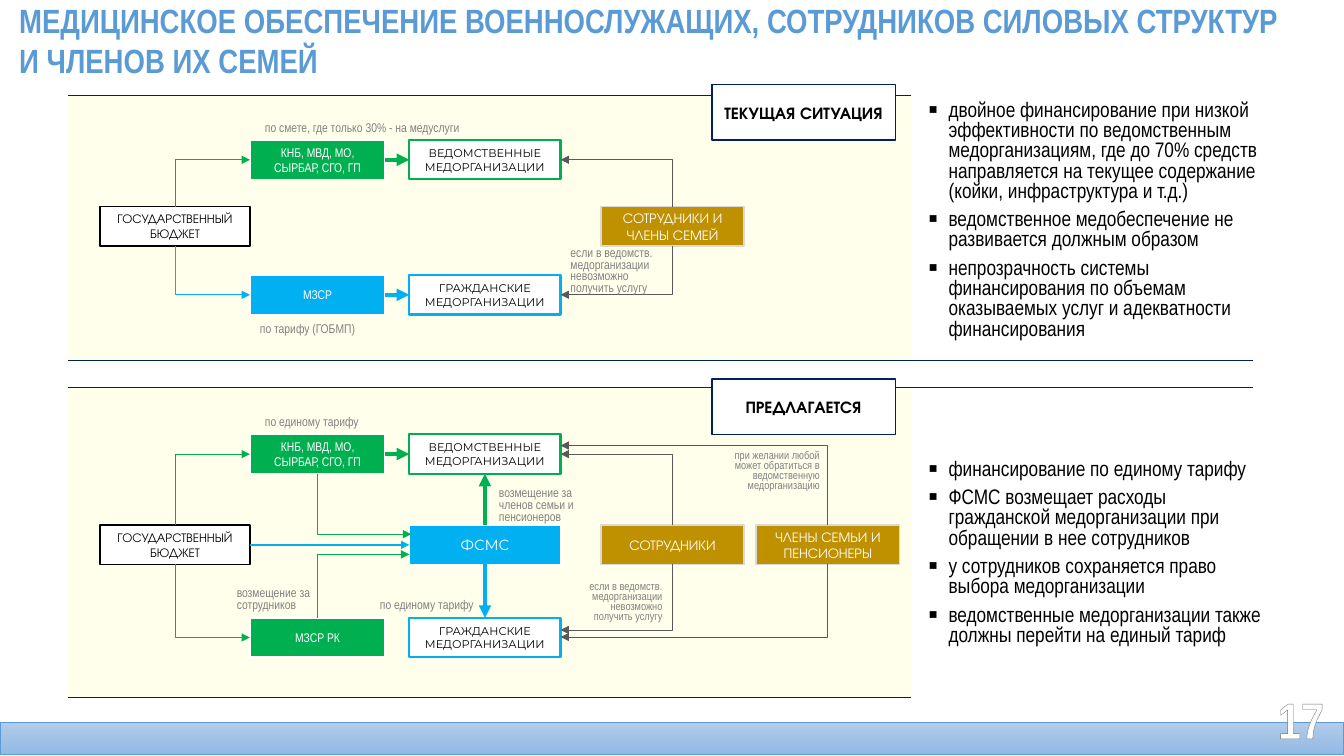
import pptx
import pptx.dml.color
import pptx.enum.shapes
import pptx.enum.text
import pptx.oxml.ns
import pptx.util
from lxml import etree

Inches = pptx.util.Inches
Anchor = pptx.enum.text.MSO_ANCHOR
Align = pptx.enum.text.PP_ALIGN
Kind = pptx.enum.shapes.MSO_CONNECTOR
qn = pptx.oxml.ns.qn
TOP, LEFT, BOTTOM, RIGHT = range(4)


class Theme:
    """Colours, fonts and type sizes of the slide."""
    white, black, cream, pale = "FFFFFF", "000000", "FFFFEB", "D9D9D9"
    green, blue, gold, navy = "00B050", "00B0F0", "BF9000", "002060"
    note, dark, edge = "808080", "595959", "767171"
    sky, light, deep = "5B9BD5", "B1CBE9", "93B9E4"
    narrow, round, wide = "Arial Narrow", "Montserrat", "TeX Gyre Adventor"
    tiny, small, mid, core, tag, body, head, page = 8, 9, 10, 10.5, 12, 15, 24, 36


T = Theme()


def tint(code):
    """Turn a hex code into a colour."""
    return pptx.dml.color.RGBColor.from_string(code)


def write(frame, text, size=T.small, font=T.narrow, color=T.note, bold=False,
          align=Align.LEFT, anchor=Anchor.TOP, pad=(0.1, 0.05), space=1.0, after=0):
    """Fill a text frame, one paragraph a line, and return its paragraphs."""
    frame.word_wrap = True
    frame.auto_size = pptx.enum.text.MSO_AUTO_SIZE.NONE
    frame.vertical_anchor = anchor
    frame.margin_left = frame.margin_right = Inches(pad[0])
    frame.margin_top = frame.margin_bottom = Inches(pad[1])
    frame.text = text
    for para in frame.paragraphs:
        para.alignment, para.line_spacing = align, space
        para.space_before, para.space_after = pptx.util.Pt(0), pptx.util.Pt(after)
        face = para.runs[0].font
        face.size, face.name, face.bold = pptx.util.Pt(size), font, bold
        face.color.rgb = tint(color)
    return frame.paragraphs


def label(slide, area, text, **form):
    """Add a text box and return its paragraphs."""
    return write(slide.shapes.add_textbox(*map(Inches, area)).text_frame, text, **form)


def block(slide, area, fill, line=None, width=1, text=None, **form):
    """Add a rectangle, with centred text if there is any."""
    box = slide.shapes.add_shape(pptx.enum.shapes.MSO_SHAPE.RECTANGLE, *map(Inches, area))
    box.shadow.inherit = False
    box.fill.solid()
    box.fill.fore_color.rgb = tint(fill)
    if line:
        box.line.color.rgb = tint(line)
        box.line.width = pptx.util.Pt(width)
    else:
        box.line.fill.background()
    if text:
        write(box.text_frame, text, align=Align.CENTER, anchor=Anchor.MIDDLE,
              pad=(0.08, 0.04), **form)
    return box


def people(slide, left, top, text):
    """Add a box for a group of patients."""
    return block(slide, (left, top, 1.42, 0.39), T.gold, T.pale, text=text,
                 size=T.mid, font=T.wide, color=T.white)


def spot(end):
    """Give the point of an end: a point, or a box and its side."""
    if isinstance(end[0], (int, float)):
        return Inches(end[0]), Inches(end[1])
    box, side = end
    right, down = ((1, 0), (0, 1), (1, 2), (2, 1))[side]
    return box.left + box.width * right // 2, box.top + box.height * down // 2


def link(slide, tip, root, color, width=0.5, bent=False, arrow=True):
    """Join two ends with a line whose arrowhead is at the tip."""
    kind = Kind.ELBOW if bent else Kind.STRAIGHT
    line = slide.shapes.add_connector(kind, *spot(tip), *spot(root))
    for end, join in ((tip, line.begin_connect), (root, line.end_connect)):
        if not isinstance(end[0], (int, float)):
            join(*end)
    line.line.color.rgb = tint(color)
    line.line.width = pptx.util.Pt(width)
    props = line._element.spPr
    if bent:
        props.find(qn("a:prstGeom")).set("prst", "bentConnector2")
    if arrow:
        etree.SubElement(props.find(qn("a:ln")), qn("a:headEnd"), type="triangle")
    etree.SubElement(props, qn("a:effectLst"))


def points(slide, top, *items):
    """Add a list with square bullets."""
    for para in label(slide, (9.11, top, 3.55, 2.38), "\n".join(items), size=T.body,
                      color=T.black, anchor=Anchor.MIDDLE, space=0.8, after=6):
        props = para._p.get_or_add_pPr()
        props.set("marL", str(Inches(0.2)))
        props.set("indent", str(-Inches(0.2)))
        etree.SubElement(props, qn("a:buSzPct"), val="130000")
        etree.SubElement(props, qn("a:buFont"), typeface="Arial")
        etree.SubElement(props, qn("a:buChar"), char="▪")


def scheme(slide, high, mid, low, health, color, staff):
    """Draw what both schemes share and return the boxes."""
    state = block(slide, (0.99, mid, 1.49, 0.39), T.white, T.black,
                  text="ГОСУДАРСТВЕННЫЙ БЮДЖЕТ", font=T.wide, color=T.black)
    pays = [block(slide, (2.48, top, 1.34, 0.39), fill, T.white, text=text, color=T.white)
            for top, fill, text in ((high, T.green, "КНБ, МВД, МО, СЫРБАР, СГО, ГП"),
                                    (low, color, health))]
    cares = [block(slide, (4.06, top, 1.5, 0.39), T.white, line, 1.5, text,
                   size=T.tiny, font=T.round, color=T.black)
             for top, line, text in ((high, T.green, "ВЕДОМСТВЕННЫЕ МЕДОРГАНИЗАЦИИ"),
                                     (low, T.blue, "ГРАЖДАНСКИЕ МЕДОРГАНИЗАЦИИ"))]
    staff = people(slide, 5.96, mid, staff)
    link(slide, (pays[0], LEFT), (state, TOP), T.green, bent=True)
    link(slide, (pays[1], LEFT), (state, BOTTOM), color, bent=True)
    link(slide, (cares[0], LEFT), (pays[0], RIGHT), T.green, 3)
    link(slide, (cares[0], RIGHT), (staff, TOP), T.dark, bent=True)
    return state, *pays, *cares, staff


def current(slide):
    """Draw the scheme as it is now."""
    block(slide, (0.67, 0.95, 8.37, 2.66), T.cream)
    _, _, health, _, civil, staff = scheme(
        slide, 1.39, 2.05, 2.73, "МЗСР", T.blue, "СОТРУДНИКИ И ЧЛЕНЫ СЕМЕЙ")
    link(slide, (civil, LEFT), (health, RIGHT), T.blue, 3)
    link(slide, (civil, RIGHT), (staff, BOTTOM), T.dark, bent=True)
    label(slide, (2.53, 1.14, 2.56, 0.25), "по смете, где только 30% - на медуслуги")
    label(slide, (2.48, 3.13, 2.56, 0.25), "по тарифу (ГОБМП)")
    label(slide, (5.56, 2.42, 1.11, 0.56),
          "если в ведомств. медорганизации невозможно получить услугу", space=0.75)


def planned(slide):
    """Draw the scheme that is proposed."""
    block(slide, (0.67, 3.84, 8.37, 3.08), T.cream)
    state, force, health, own, civil, staff = scheme(
        slide, 4.31, 5.21, 6.13, "МЗСР РК", T.green, "СОТРУДНИКИ")
    kin = people(slide, 7.5, 5.21, "ЧЛЕНЫ СЕМЬИ И ПЕНСИОНЕРЫ")
    fund = block(slide, (4.06, 5.21, 1.5, 0.39), T.blue, T.white, text="ФСМС",
                 size=T.core, font=T.round, color=T.white)
    for tip, root, color in (
            ((4.08, 5.3), (force, BOTTOM), T.green), ((4.06, 5.5), (health, TOP), T.green),
            ((5.56, 6.25), (staff, BOTTOM), T.dark), ((5.56, 4.42), (kin, TOP), T.dark),
            ((5.56, 6.32), (kin, BOTTOM), T.dark)):
        link(slide, tip, root, color, bent=True)
    link(slide, (own, BOTTOM), (fund, TOP), T.green, 3)
    link(slide, (civil, TOP), (fund, BOTTOM), T.blue, 3)
    link(slide, (fund, LEFT), (state, RIGHT), T.blue, 1.5)
    for left, top in ((2.53, 4.06), (3.67, 5.87)):
        label(slide, (left, top, 2.56, 0.25), "по единому тарифу")
    label(slide, (2.25, 5.78, 1.18, 0.34), "возмещение за сотрудников", space=0.8)
    label(slide, (4.85, 4.79, 1.18, 0.47), "возмещение за членов семьи и пенсионеров", space=0.8)
    for left, top, text in (
            (5.56, 5.73, "если в ведомств. медорганизации невозможно получить услугу"),
            (7.12, 4.43, "при желании любой может обратиться в ведомственную медорганизацию")):
        label(slide, (left, top, 1.11, 0.51), text, size=T.tiny, align=Align.RIGHT, space=0.75)


def footer(slide):
    """Draw the bottom bar and the page number."""
    bar = block(slide, (0, 7.17, 13.32, 0.31), T.light, T.sky, 0.5)
    bar.fill.gradient()
    bar.fill.gradient_angle = 270
    for stop, color in zip(bar.fill.gradient_stops, (T.light, T.deep)):
        stop.color.rgb = tint(color)
    para = label(slide, (12.33, 6.93, 0.9, 0.4), "17", size=T.page, color=T.white,
                 bold=True, align=Align.RIGHT, anchor=Anchor.MIDDLE)[0]
    line = etree.Element(qn("a:ln"), w=str(pptx.util.Pt(0.8)))
    etree.SubElement(etree.SubElement(line, qn("a:solidFill")), qn("a:srgbClr"), val=T.edge)
    para.runs[0].font._element.insert(0, line)


def main():
    """Build the slide and save it."""
    deck = pptx.Presentation()
    deck.slide_width, deck.slide_height = Inches(13.33), Inches(7.5)
    slide = deck.slides.add_slide(deck.slide_layouts[5])
    title = slide.shapes.title
    title.left, title.top, title.width, title.height = map(Inches, (0.09, -0.05, 12.95, 0.91))
    write(title.text_frame, "МЕДИЦИНСКОЕ ОБЕСПЕЧЕНИЕ ВОЕННОСЛУЖАЩИХ, СОТРУДНИКОВ "
          "СИЛОВЫХ СТРУКТУР И ЧЛЕНОВ ИХ СЕМЕЙ", size=T.head, color=T.sky, bold=True)
    current(slide)
    planned(slide)
    for top, right in ((0.95, 9.04), (3.58, 12.43), (3.84, 12.43), (6.92, 9.04)):
        link(slide, (right, top), (0.67, top), T.navy, arrow=False)
    for top, text in ((0.84, "ТЕКУЩАЯ СИТУАЦИЯ"), (3.76, "ПРЕДЛАГАЕТСЯ")):
        block(slide, (7.06, top, 1.82, 0.55), T.white, T.navy, text=text,
              size=T.tag, font=T.wide, color=T.black, bold=True)
    points(slide, 1, "двойное финансирование при низкой эффективности по ведомственным "
           "медорганизациям, где до 70% средств направляется на текущее содержание "
           "(койки, инфраструктура и т.д.)",
           "ведомственное медобеспечение не развивается должным образом",
           "непрозрачность системы финансирования по объемам оказываемых услуг "
           "и адекватности финансирования")
    points(slide, 4.3, "финансирование по единому тарифу",
           "ФСМС возмещает расходы гражданской медорганизации при обращении в нее сотрудников",
           "у сотрудников сохраняется право выбора медорганизации",
           "ведомственные медорганизации также должны перейти на единый тариф")
    footer(slide)
    deck.save("out.pptx")


if __name__ == "__main__":
    main()
